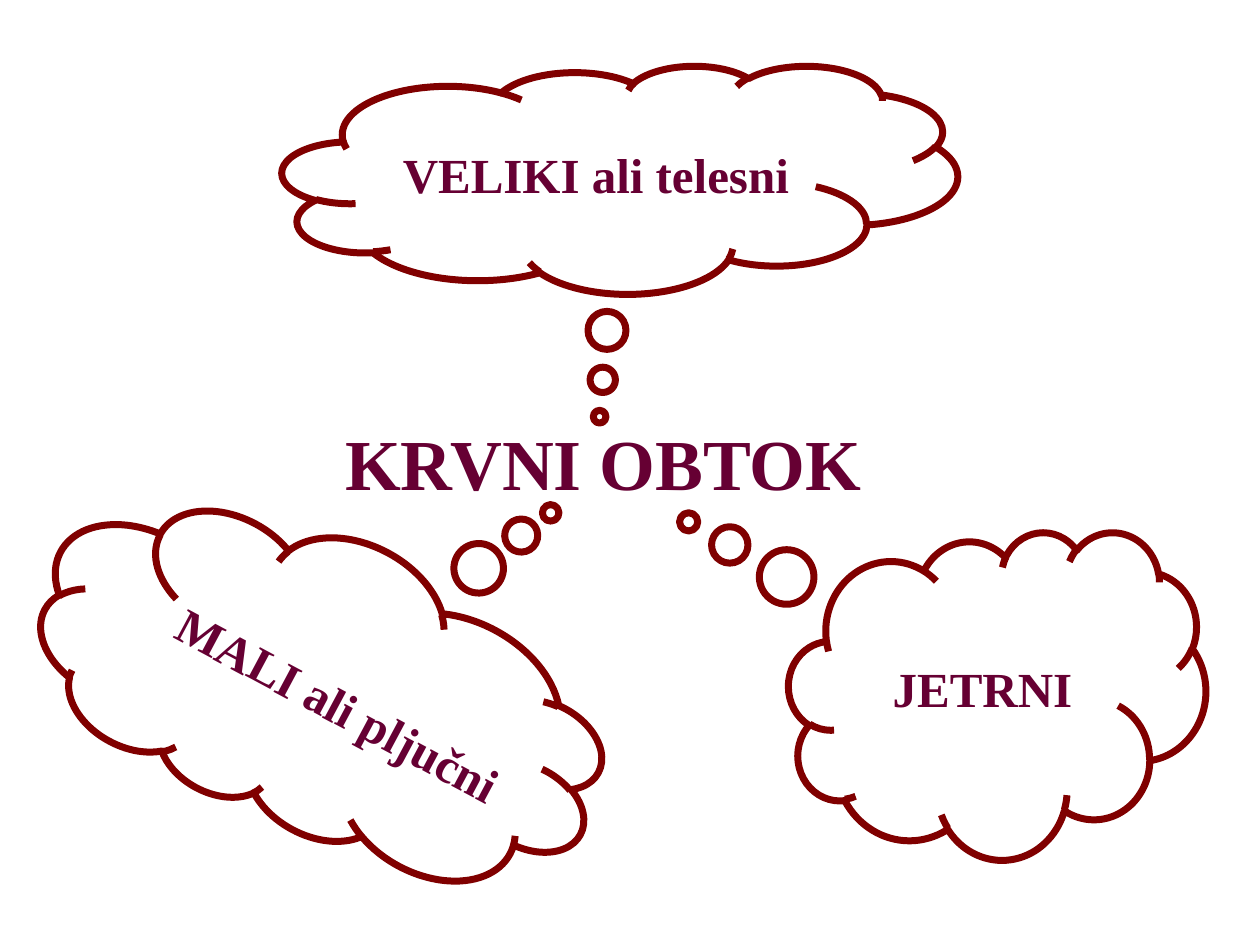
from pptx import Presentation
from pptx.dml.color import RGBColor
from pptx.enum.shapes import MSO_SHAPE
from pptx.enum.text import MSO_ANCHOR, MSO_AUTO_SIZE, PP_ALIGN
from pptx.util import Inches, Pt

COLORS = {"text": "660033", "outline": "800000"}


def write_text(frame, text, size=28, align=PP_ALIGN.CENTER, turn=0):
    frame.word_wrap = True
    frame.auto_size = MSO_AUTO_SIZE.NONE
    frame.vertical_anchor = MSO_ANCHOR.MIDDLE
    paragraph = frame.paragraphs[0]
    paragraph.alignment = align
    run = paragraph.add_run()
    run.text = text
    run.font.name = "Times New Roman"
    run.font.size = Pt(size)
    run.font.bold = True
    run.font.color.rgb = RGBColor.from_string(COLORS["text"])
    if turn:
        frame._txBody.bodyPr.set("rot", str(turn * 60000))


class CirculationSlide:
    def __init__(self, deck):
        self.slide = deck.slides.add_slide(deck.slide_layouts[5])

    def title(self, text, left, top, width, height):
        heading = self.slide.shapes.title
        heading.left, heading.top = Inches(left), Inches(top)
        heading.width, heading.height = Inches(width), Inches(height)
        write_text(heading.text_frame, text, size=41, align=PP_ALIGN.LEFT)

    def cloud(self, text, box, tail, rotation=0, turn=0):
        thought = self.slide.shapes.add_shape(
            MSO_SHAPE.CLOUD_CALLOUT, *(Inches(length) for length in box))
        thought.adjustments[0], thought.adjustments[1] = tail
        thought.rotation = rotation
        thought.shadow.inherit = False
        thought.fill.background()
        thought.line.color.rgb = RGBColor.from_string(COLORS["outline"])
        thought.line.width = Pt(4)
        write_text(thought.text_frame, text, turn=turn)


def main():
    deck = Presentation()
    deck.slide_width, deck.slide_height = Inches(10), Inches(7.5)
    circulation = CirculationSlide(deck)
    circulation.title("KRVNI OBTOK", 2.64, 3.04, 4.58, 1.25)
    circulation.cloud("VELIKI ali telesni", (2.24, 0.52, 5.36, 1.81), (-0.03, 1.04))
    circulation.cloud("MALI ali pljučni", (0.22, 4.28, 4.69, 2.36), (-0.2, 0.88),
                      rotation=208.1, turn=180)
    circulation.cloud("JETRNI", (6.26, 4.22, 3.31, 2.6), (-0.74, -0.53))
    deck.save("out.pptx")


if __name__ == "__main__":
    main()
